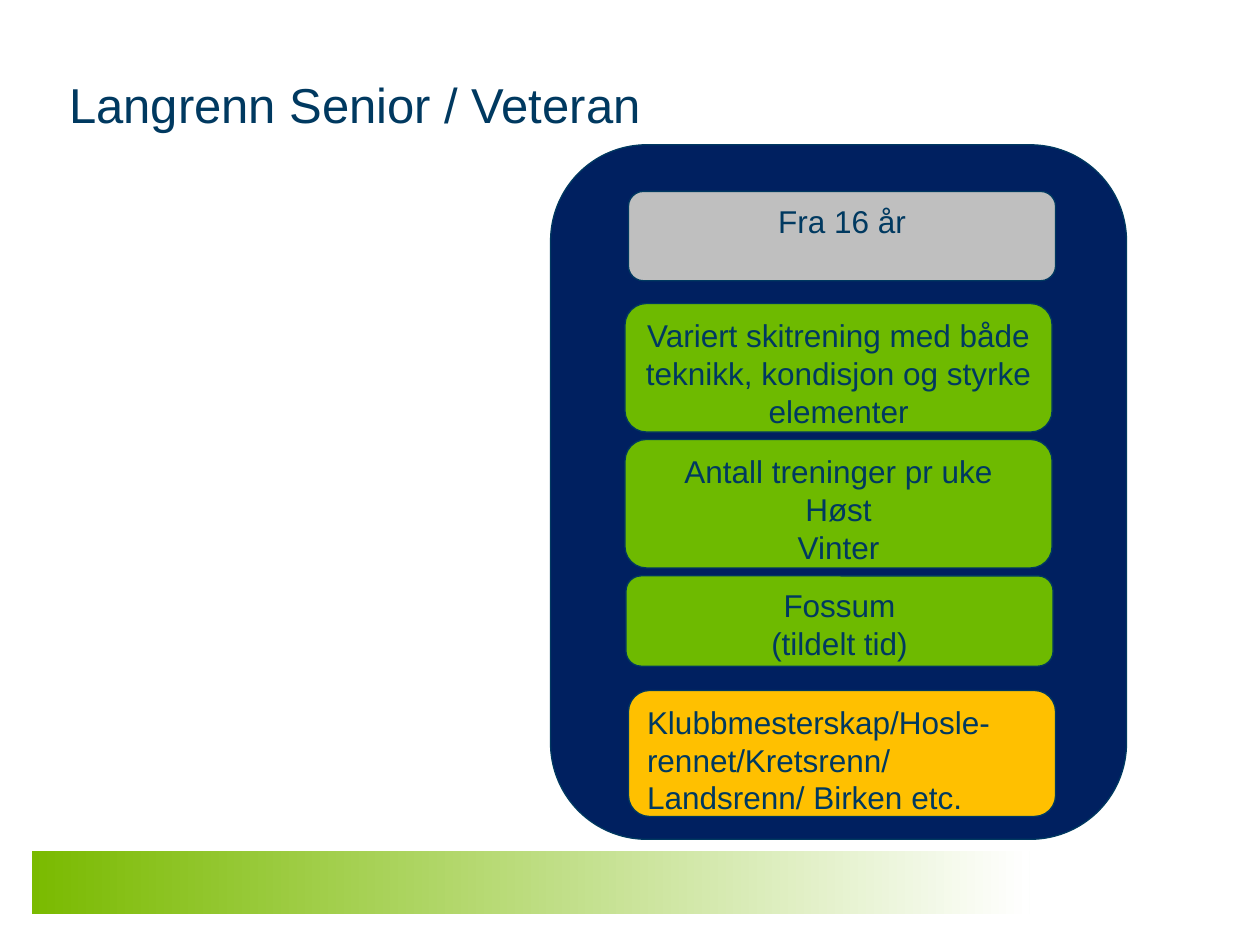
from dataclasses import dataclass

import pptx
import pptx.dml.color
import pptx.enum.shapes
import pptx.enum.text
import pptx.util

Cm = pptx.util.Cm
Pt = pptx.util.Pt
Align = pptx.enum.text.PP_ALIGN
Anchor = pptx.enum.text.MSO_ANCHOR
Preset = pptx.enum.shapes.MSO_SHAPE


@dataclass(frozen=True)
class Theme:
    font: str = "Arial"
    ink: str = "003960"
    navy: str = "002060"
    green: str = "6EBA00"
    band_green: str = "7ABA00"
    grey: str = "BFBFBF"
    amber: str = "FFC000"
    white: str = "FFFFFF"
    title_size: float = 28
    body_size: float = 18
    outline: float = 0.75


THEME = Theme()


def rgb(value):
    return pptx.dml.color.RGBColor.from_string(value)


def add_run(paragraph, text, size):
    run = paragraph.add_run()
    run.text = text
    run.font.name = THEME.font
    run.font.size = Pt(size)
    run.font.color.rgb = rgb(THEME.ink)


def add_panel(slide, box, colour):
    panel = slide.shapes.add_shape(Preset.ROUNDED_RECTANGLE, *map(Cm, box))
    panel.shadow.inherit = False
    panel.adjustments[0] = 0.167
    panel.fill.solid()
    panel.fill.fore_color.rgb = rgb(colour)
    panel.line.color.rgb = rgb(THEME.ink)
    panel.line.width = Pt(THEME.outline)
    return panel


def add_band(slide, box):
    band = slide.shapes.add_shape(Preset.RECTANGLE, *map(Cm, box))
    band.shadow.inherit = False
    band.line.fill.background()
    band.fill.gradient()
    band.fill.gradient_angle = 0
    for stop, colour in zip(band.fill.gradient_stops, (THEME.band_green, THEME.white)):
        stop.color.rgb = rgb(colour)


def place_title(slide, box, text):
    title = slide.shapes.title
    title.left, title.top, title.width, title.height = map(Cm, box)
    frame = title.text_frame
    frame.vertical_anchor = Anchor.MIDDLE
    heading = frame.paragraphs[0]
    heading.alignment = Align.LEFT
    add_run(heading, text, THEME.title_size)


def add_card(slide, box, colour, lines, alignment):
    card = add_panel(slide, box, colour)
    frame = card.text_frame
    frame.word_wrap = True
    frame.vertical_anchor = Anchor.TOP
    for index, line in enumerate(lines):
        paragraph = frame.add_paragraph() if index else frame.paragraphs[0]
        paragraph.alignment = alignment
        add_run(paragraph, line, THEME.body_size)


def add_training_group(slide, box):
    left, top, width, height = box
    add_panel(slide, box, THEME.navy)
    card_width = 8.61
    cards = [
        (1.57, 0.94, 1.8, THEME.grey, ["Fra 16 år"], Align.CENTER),
        (1.5, 3.2, 2.59, THEME.green,
         ["Variert skitrening med både teknikk, kondisjon og styrke elementer"], Align.CENTER),
        (1.5, 5.94, 2.59, THEME.green,
         ["Antall treninger pr uke", "Høst", "Vinter"], Align.CENTER),
        (1.52, 8.69, 1.82, THEME.green, ["Fossum", "(tildelt tid)"], Align.CENTER),
        (1.57, 11, 2.54, THEME.amber,
         ["Klubbmesterskap/Hosle-rennet/Kretsrenn/", "Landsrenn/ Birken etc."], Align.LEFT),
    ]
    for dx, dy, card_height, colour, lines, alignment in cards:
        add_card(slide, (left + dx, top + dy, card_width, card_height),
                 colour, lines, alignment)


def main():
    deck = pptx.Presentation()
    deck.slide_width, deck.slide_height = Cm(25.4), Cm(19.05)
    slide = deck.slides.add_slide(deck.slide_layouts[5])
    add_band(slide, (0.64, 17.15, 20.12, 1.27))
    place_title(slide, (1.14, 1.32, 22.86, 1.55), "Langrenn Senior / Veteran")
    add_training_group(slide, (11.1, 2.92, 11.61, 14))
    deck.save("out.pptx")


if __name__ == "__main__":
    main()
